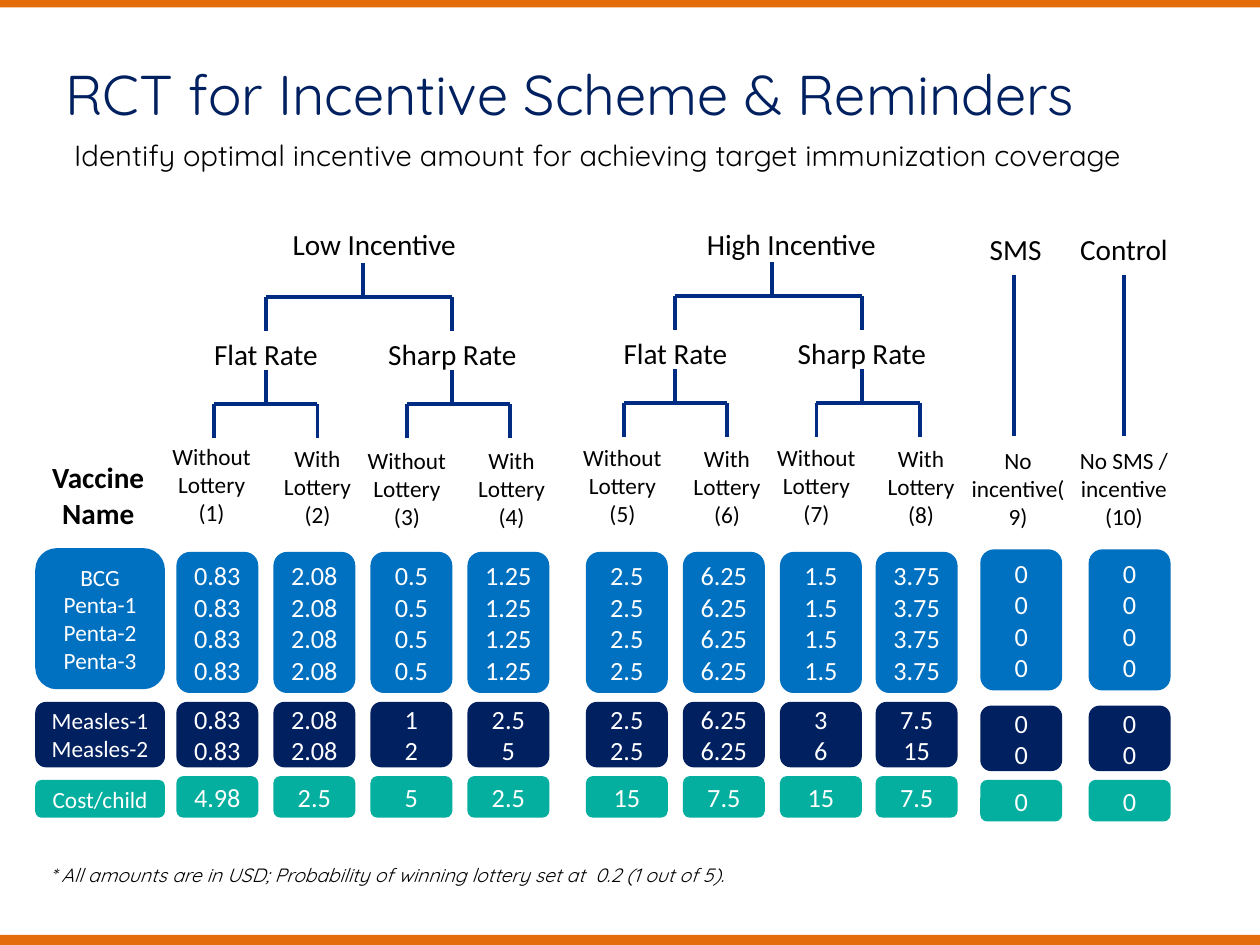
from pptx import Presentation
from pptx.util import Inches, Pt
from pptx.dml.color import RGBColor
from pptx.enum.shapes import MSO_SHAPE as Geo, MSO_CONNECTOR as Conn
from pptx.enum.text import PP_ALIGN as Align, MSO_ANCHOR as Anchor, MSO_AUTO_SIZE as Fit
from pptx.oxml.ns import qn
from lxml import etree

COLORS = {"blue": "0070C0", "navy": "002060", "teal": "05AF9F", "line": "002B82",
          "bar": "E46C0A", "black": "000000", "white": "FFFFFF"}
SANS, ROUND = "Calibri", "Quicksand"


def color(name):
    return RGBColor.from_string(COLORS[name])


class Deck:
    def __init__(self):
        self.prs = Presentation()
        self.prs.slide_width, self.prs.slide_height = Inches(10), Inches(7.5)
        self.slide = self.prs.slides.add_slide(self.prs.slide_layouts[5])

    def fill_text(self, frame, lines, ink="black", align=Align.CENTER, **font):
        style = {"name": SANS, "size": 16.7, "bold": False, "italic": False, **font}
        style["size"] = Pt(style["size"])
        frame.word_wrap = True
        for i, line in enumerate(lines):
            par = frame.add_paragraph() if i else frame.paragraphs[0]
            par.alignment = align
            run = par.add_run()
            run.text = line
            for key, val in style.items():
                setattr(run.font, key, val)
            run.font.color.rgb = color(ink)

    def title(self, text, x, y, w, h):
        box = self.slide.shapes.title
        spots = {"left": x, "top": y, "width": w, "height": h}
        for key, val in spots.items():
            setattr(box, key, Inches(val))
        frame = box.text_frame
        frame.auto_size, frame.vertical_anchor = Fit.NONE, Anchor.TOP
        self.fill_text(frame, [text], "navy", Align.LEFT, name=ROUND, size=32)

    def text(self, text, x, y, w, h=0.38, **style):
        box = self.slide.shapes.add_textbox(Inches(x), Inches(y), Inches(w), Inches(h))
        self.fill_text(box.text_frame, [text], **style)
        box.text_frame.auto_size = Fit.SHAPE_TO_FIT_TEXT

    def label(self, text, mid, y, w, h=0.38, **style):
        self.text(text, mid - w / 2, y, w, h, **style)

    def shape(self, geo, fill, x, y, w, h):
        box = self.slide.shapes.add_shape(geo, Inches(x), Inches(y), Inches(w), Inches(h))
        box.shadow.inherit = False
        box.fill.solid()
        box.fill.fore_color.rgb = color(fill)
        box.line.fill.background()
        return box

    def card(self, lines, fill, x, y, w, h, size=15):
        frame = self.shape(Geo.ROUNDED_RECTANGLE, fill, x, y, w, h).text_frame
        frame.vertical_anchor = Anchor.MIDDLE
        frame.margin_left = frame.margin_right = Inches(0.05)
        self.fill_text(frame, lines, "white", size=size)

    def line(self, x1, y1, x2, y2):
        ln = self.slide.shapes.add_connector(
            Conn.STRAIGHT, Inches(x1), Inches(y1), Inches(x2), Inches(y2))
        ln.line.color.rgb = color("line")
        ln.line.width = Pt(2.25)
        etree.SubElement(ln._element.spPr, qn("a:effectLst"))

    def fork(self, mid, y, left, right):
        """A stem, a crossbar and two drops."""
        bar = y + 0.27
        self.line(mid, y, mid, bar)
        self.line(left, bar, right, bar)
        for x in (left, right):
            self.line(x, bar, x, bar + 0.27)


def main():
    deck = Deck()

    # Heading
    deck.title("RCT for Incentive Scheme & Reminders", 0.42, 0.42, 10, 0.64)
    deck.text("Identify optimal incentive amount for achieving target immunization coverage",
              0.49, 1.04, 9.68, align=Align.LEFT, name=ROUND)

    # Incentive trees: name, name centre, name width, shift right, shift down
    for name, mid, w, dx, dy in [("Low Incentive", 2.97, 2.13, 0, 0),
                                 ("High Incentive", 6.28, 1.82, 3.25, -0.01)]:
        deck.label(name, mid, 1.75, w)
        flat, sharp = 2.11 + dx, 3.59 + dx
        deck.fork(2.88 + dx, 2.09 + dy, flat, sharp)
        for rate, x, wide, left in [("Flat Rate", flat, 1.18, 1.7 + dx),
                                    ("Sharp Rate", sharp, 1.42, 3.23 + dx)]:
            deck.label(rate, x, 2.62 + dy, wide)
            deck.fork(x, 2.94 + dy, left, left + 0.82)

    # Arms without incentive
    for name, mid, x in [("SMS", 8.06, 8.05), ("Control", 8.92, 8.92)]:
        deck.label(name, mid, 1.79, 1.48)
        deck.line(x, 2.18, x, 3.46)

    # Row names
    deck.text("Vaccine Name", 0.28, 3.6, 1, 0.66, bold=True)
    for lines, fill, y, h in [(["BCG", "Penta-1", "Penta-2", "Penta-3"], "blue", 4.35, 1.12),
                              (["Measles-1", "Measles-2"], "navy", 5.57, 0.52),
                              (["Cost/child"], "teal", 6.19, 0.3)]:
        deck.card(lines, fill, 0.28, y, 1.03, h, size=13.3)

    # Arms: heading, heading centre and top, card left, first four, measles, cost
    arms = [
        ("Without Lottery (1)", 1.68, 3.46, 1.4, "0.83", ["0.83", "0.83"], "4.98"),
        ("With Lottery (2)", 2.52, 3.48, 2.17, "2.08", ["2.08", "2.08"], "2.5"),
        ("Without Lottery (3)", 3.23, 3.49, 2.94, "0.5", ["1", "2"], "5"),
        ("With Lottery (4)", 4.06, 3.49, 3.71, "1.25", ["2.5", "5"], "2.5"),
        ("Without Lottery (5)", 4.94, 3.47, 4.65, "2.5", ["2.5", "2.5"], "15"),
        ("With Lottery (6)", 5.77, 3.48, 5.42, "6.25", ["6.25", "6.25"], "7.5"),
        ("Without Lottery (7)", 6.48, 3.47, 6.19, "1.5", ["3", "6"], "15"),
        ("With Lottery (8)", 7.31, 3.48, 6.95, "3.75", ["7.5", "15"], "7.5"),
        ("No incentive(9)", 8.08, 3.49, 7.78, "0", ["0", "0"], "0"),
        ("No SMS / incentive (10)", 8.92, 3.49, 8.64, "0", ["0", "0"], "0"),
    ]
    for name, mid, top, x, base, measles, cost in arms:
        deck.label(name, mid, top, 1.03 if "SMS" in name else 0.94, 0.77, size=13.3)
        tops = (4.36, 5.6, 6.19) if cost == "0" else (4.38, 5.57, 6.16)
        rows = [([base] * 4, "blue", 1.12), (measles, "navy", 0.52), ([cost], "teal", 0.33)]
        for (lines, fill, h), y in zip(rows, tops):
            deck.card(lines, fill, x, y, 0.65, h)

    # Footnote and edge bars
    deck.text("* All amounts are in USD; Probability of winning lottery set at  0.2 (1 out of 5).",
              0.3, 6.8, 7.8, 0.29, align=Align.LEFT, name=ROUND, size=11, italic=True)
    for x, y in [(-0.04, 7.42), (0, -0.02)]:
        deck.shape(Geo.RECTANGLE, "bar", x, y, 10.05, 0.08)

    deck.prs.save("out.pptx")


if __name__ == "__main__":
    main()
